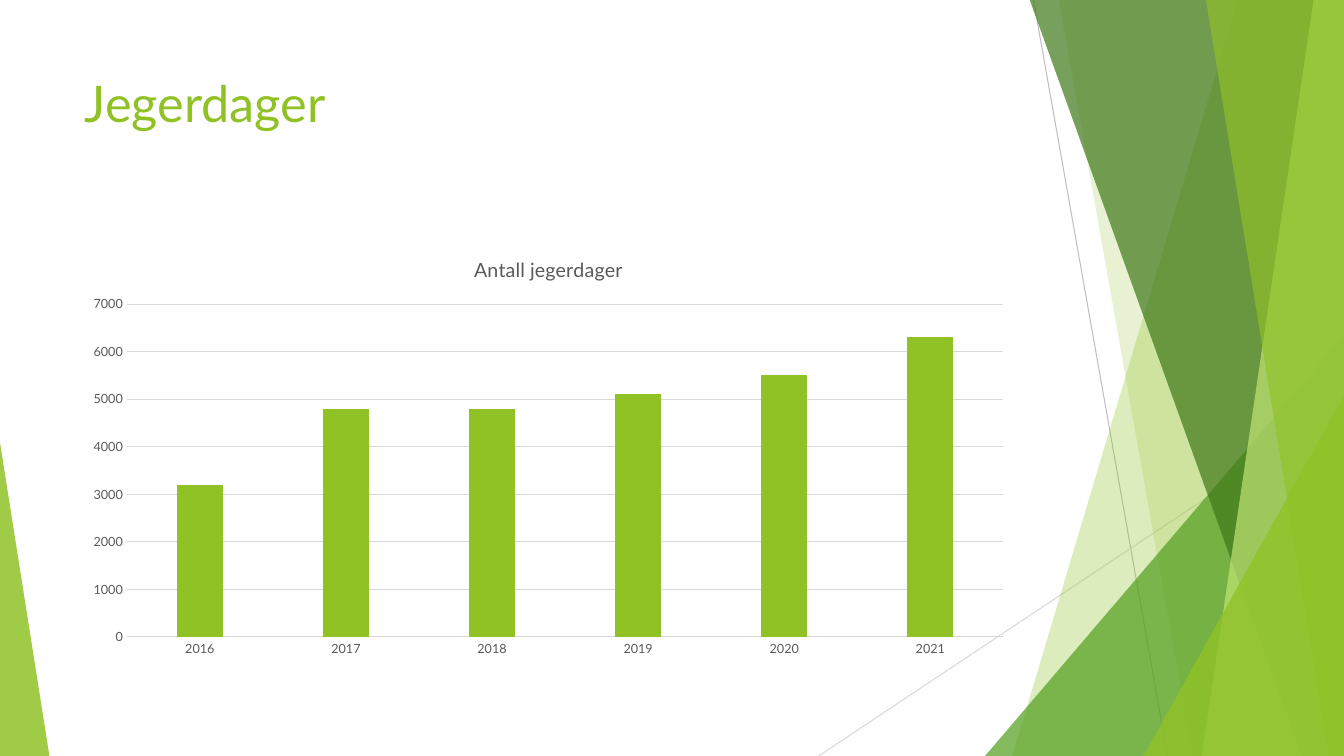
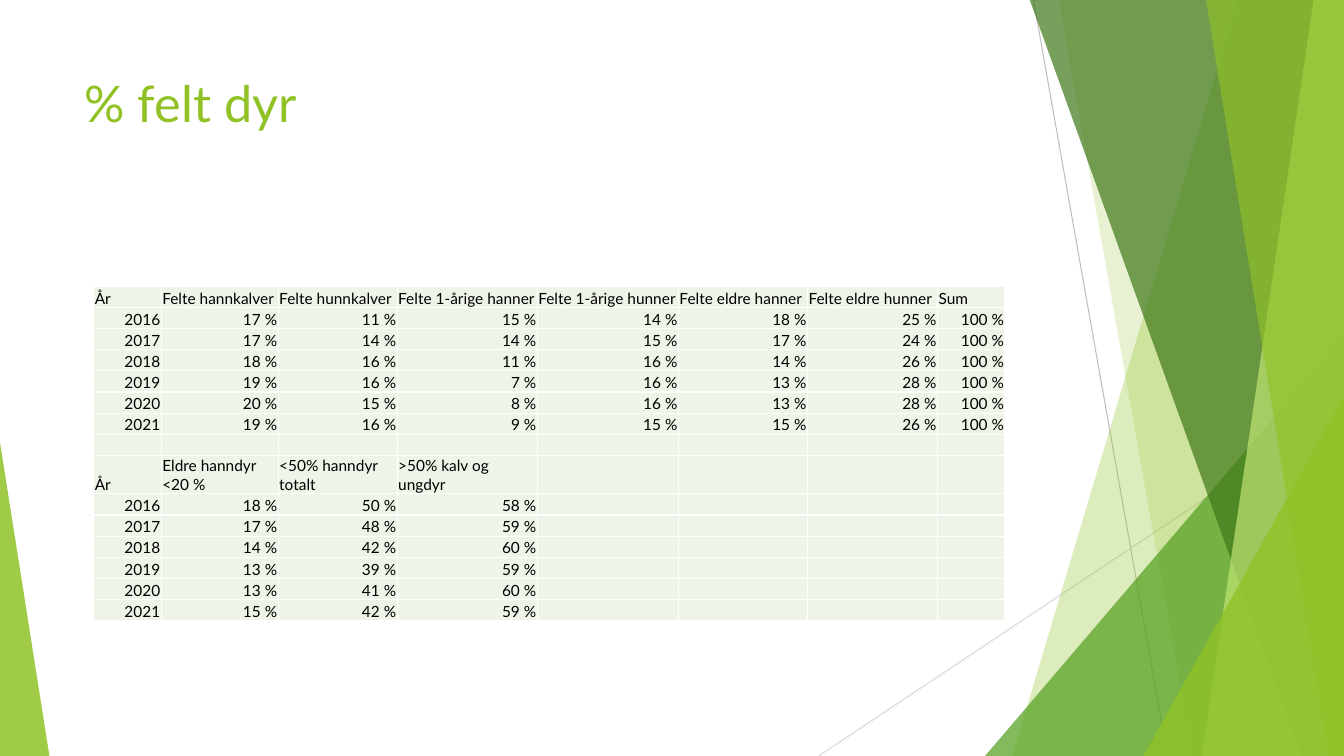
"""Build two slides on hunting days and the share of felled animals."""
from lxml import etree
from pptx import Presentation
from pptx import util as u
from pptx.chart import data
from pptx.dml import color
from pptx.enum import chart as ch, shapes, text
from pptx.oxml import ns

COLORS = {
    "lime": "90C226", "green": "54A021", "forest": "3F7819", "pale": "C0E474",
    "cell": "EEF4E8", "white": "FFFFFF", "black": "000000", "label": "595959",
    "grey": "BFBFBF", "rule": "D9D9D9",
}
FONT = "Lato"
WIDTH, HEIGHT, TOP = 13.33, 7.5, -0.01
YEARS = range(2016, 2022)
HUNTING_DAYS = (3200, 4800, 4800, 5100, 5500, 6300)
COLUMN_WIDTHS = (0.67, 1.16, 1.18, 1.39, 1.4, 1.28, 1.29, 0.67)
ROW_HEIGHT = 0.21
ANIMAL_HEADS = ("År", "Felte hannkalver", "Felte hunnkalver", "Felte 1-årige hanner",
                "Felte 1-årige hunner", "Felte eldre hanner", "Felte eldre hunner", "Sum")
ANIMAL_SHARES = (
    (17, 11, 15, 14, 18, 25, 100),
    (17, 14, 14, 15, 17, 24, 100),
    (18, 16, 11, 16, 14, 26, 100),
    (19, 16, 7, 16, 13, 28, 100),
    (20, 15, 8, 16, 13, 28, 100),
    (19, 16, 9, 15, 15, 26, 100),
)
GOAL_HEADS = ("År", "Eldre hanndyr <20 %", "<50% hanndyr totalt", ">50% kalv og ungdyr")
GOAL_SHARES = ((18, 50, 58), (17, 48, 59), (14, 42, 60),
               (13, 39, 59), (13, 41, 60), (15, 42, 59))


def rgb(name):
    return color.RGBColor.from_string(COLORS[name])


def inches(*values):
    return [u.Inches(v) for v in values]


def apply(obj, values):
    for name, value in values.items():
        setattr(obj, name, value)


def set_font(font, size, name):
    apply(font, {"name": FONT, "size": u.Pt(size), "bold": False})
    font.color.rgb = rgb(name)


def set_line(line, name, width=0.75):
    line.color.rgb = rgb(name)
    line.width = u.Pt(width)


def set_glass(sp, name, opacity):
    sp.shadow.inherit = False
    sp.line.fill.background()
    sp.fill.solid()
    sp.fill.fore_color.rgb = rgb(name)
    clr = next(sp.element.iter(ns.qn("a:srgbClr")))
    etree.SubElement(clr, ns.qn("a:alpha"), val=str(opacity * 1000))


def add_line(s, start, end, name):
    sp = s.shapes.add_connector(shapes.MSO_CONNECTOR.STRAIGHT, *inches(*start, *end))
    set_line(sp.line, name)
    etree.SubElement(sp.element.find(ns.qn("p:spPr")), ns.qn("a:effectLst"))
    return sp


def add_band(s, top_x, bottom_x, name, opacity):
    points = ((WIDTH, TOP), (WIDTH, HEIGHT), (bottom_x, HEIGHT))
    builder = s.shapes.build_freeform(*inches(top_x, TOP), scale=1.0)
    builder.add_line_segments([inches(*pt) for pt in points], close=True)
    sp = builder.convert_to_shape()
    set_glass(sp, name, opacity)
    return sp


def add_triangle(s, left, top, width, apex, name, opacity):
    sp = s.shapes.add_shape(shapes.MSO_SHAPE.ISOSCELES_TRIANGLE,
                            *inches(left, top, width, HEIGHT - top))
    sp.adjustments[0] = apex
    set_glass(sp, name, opacity)
    return sp


def decorate(layout, s):
    facets = [
        add_line(s, (10.25, 0), (11.58, HEIGHT), "grey"),
        add_line(s, (WIDTH, 4.03), (8.12, HEIGHT), "rule"),
        add_band(s, 12.28, 10.04, "lime", 30),
        add_band(s, 10.5, 11.83, "lime", 20),
        add_triangle(s, 9.77, 3.33, 3.56, 1, "green", 72),
        add_band(s, 10.21, 12.91, "forest", 70),
        add_band(s, 13.03, 11.92, "pale", 70),
        add_band(s, 11.96, 13.18, "lime", 65),
        add_triangle(s, 11.34, 3.93, 1.99, 1, "lime", 80),
        add_triangle(s, 0, 4.39, 0.49, 0, "lime", 85),
    ]
    tree = layout.shapes.element
    for i, sp in enumerate(facets):
        next(sp.element.iter(ns.qn("p:cNvPr"))).set("id", str(100 + i))
        tree.insert(2 + i, sp.element)


def place_title(layout):
    left, top, width, height = inches(0.74, 0.67, 9.4, 1.44)
    apply(layout.placeholders[0], {"left": left, "top": top, "width": width, "height": height})


def add_title(s, words):
    tf = s.shapes.title.text_frame
    apply(tf, {"text": words, "word_wrap": True, "vertical_anchor": text.MSO_ANCHOR.TOP})
    p = tf.paragraphs[0]
    p.alignment = text.PP_ALIGN.LEFT
    set_font(p.runs[0].font, 36, "lime")


def add_column_chart(s, name, cats, values):
    cd = data.CategoryChartData()
    cd.categories = [str(c) for c in cats]
    cd.add_series(name, values)
    chart = s.shapes.add_chart(ch.XL_CHART_TYPE.COLUMN_CLUSTERED,
                               *inches(0.74, 2.36, 9.4, 4.24), cd).chart
    set_font(chart.font, 10, "black")
    apply(chart, {"has_legend": False, "has_title": True})
    chart.chart_title.include_in_layout = False
    tf = chart.chart_title.text_frame
    tf.text = name
    set_font(tf.paragraphs[0].runs[0].font, 14, "label")
    plot = chart.plots[0]
    apply(plot, {"gap_width": 219, "overlap": -27, "vary_by_categories": False})
    series = plot.series[0]
    series.invert_if_negative = False
    series.format.fill.solid()
    series.format.fill.fore_color.rgb = rgb("lime")
    for axis in (chart.category_axis, chart.value_axis):
        axis.major_tick_mark = ch.XL_TICK_MARK.NONE
        set_font(axis.tick_labels.font, 9, "label")
    set_line(chart.category_axis.format.line, "rule")
    axis = chart.value_axis
    apply(axis, {"minimum_scale": 0, "maximum_scale": 7000, "major_unit": 1000})
    axis.format.line.fill.background()
    set_line(axis.major_gridlines.format.line, "rule")


def share_rows(heads, shares):
    rows = [[str(year), *(f"{v} %" for v in row)] for year, row in zip(YEARS, shares)]
    return [heads, *rows]


def fill_cell(cell, words, align):
    edge = u.Inches(0.01)
    apply(cell, {"text": words, "margin_left": edge, "margin_right": edge, "margin_top": edge,
                 "margin_bottom": 0, "vertical_anchor": text.MSO_ANCHOR.BOTTOM})
    cell.fill.solid()
    cell.fill.fore_color.rgb = rgb("cell")
    p = cell.text_frame.paragraphs[0]
    p.alignment = align
    for r in p.runs:
        set_font(r.font, 11, "black")


def finish_cells(frame):
    for p in frame.element.iter(ns.qn("a:p")):
        etree.SubElement(p, ns.qn("a:endParaRPr"), sz="1100")
    for props in frame.element.iter(ns.qn("a:tcPr")):
        for i, side in enumerate("LRTB"):
            ln = etree.Element(ns.qn(f"a:ln{side}"), w=str(u.Pt(1)))
            fill = etree.SubElement(ln, ns.qn("a:solidFill"))
            etree.SubElement(fill, ns.qn("a:srgbClr"), val=COLORS["white"])
            props.insert(i, ln)


def add_share_table(s, rows):
    frame = s.shapes.add_table(len(rows), len(COLUMN_WIDTHS),
                               *inches(0.93, 2.84, sum(COLUMN_WIDTHS), ROW_HEIGHT * len(rows)))
    table = frame.table
    apply(table, {"first_row": False, "horz_banding": False})
    for column, width in zip(table.columns, COLUMN_WIDTHS):
        column.width = u.Inches(width)
    for row, words in zip(table.rows, rows):
        row.height = u.Inches(ROW_HEIGHT)
        is_head = words in (ANIMAL_HEADS, GOAL_HEADS)
        align = text.PP_ALIGN.LEFT if is_head else text.PP_ALIGN.RIGHT
        for i, cell in enumerate(row.cells):
            fill_cell(cell, words[i] if i < len(words) else "", align)
    finish_cells(frame)


def main():
    prs = Presentation()
    prs.slide_width, prs.slide_height = inches(WIDTH, HEIGHT)
    layout = prs.slide_layouts[5]
    place_title(layout)

    s = prs.slides.add_slide(layout)
    decorate(layout, s)
    add_title(s, "Jegerdager")
    add_column_chart(s, "Antall jegerdager", YEARS, HUNTING_DAYS)

    s = prs.slides.add_slide(layout)
    add_title(s, "% felt dyr")
    add_share_table(s, [*share_rows(ANIMAL_HEADS, ANIMAL_SHARES), (),
                        *share_rows(GOAL_HEADS, GOAL_SHARES)])
    prs.save("out.pptx")


if __name__ == "__main__":
    main()
